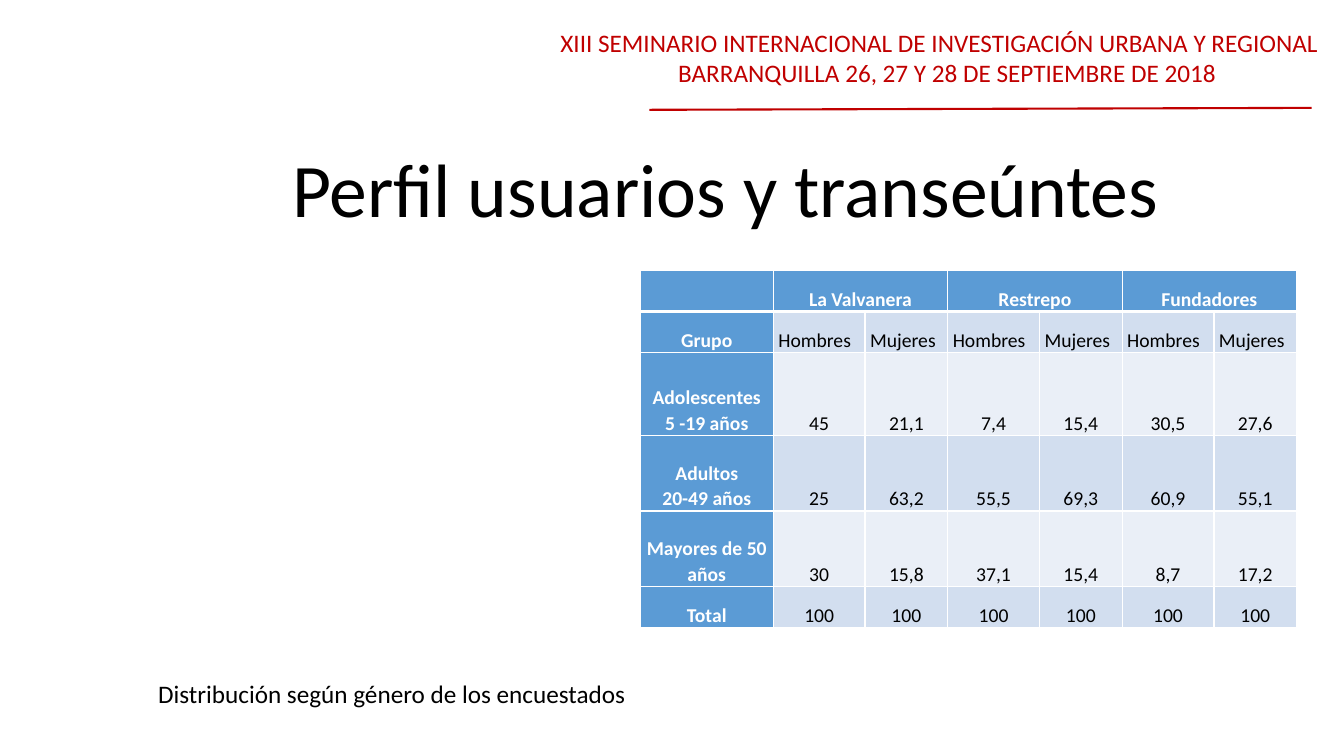
from lxml.etree import SubElement
from pptx import Presentation
from pptx.dml.color import RGBColor
from pptx.enum.shapes import MSO_CONNECTOR
from pptx.enum.text import MSO_ANCHOR, MSO_AUTO_SIZE, PP_ALIGN
from pptx.oxml import parse_xml
from pptx.oxml.ns import nsdecls, qn
from pptx.util import Inches, Pt

RED = RGBColor(0xC0, 0x00, 0x00)
BLACK = RGBColor(0x00, 0x00, 0x00)
WHITE = RGBColor(0xFF, 0xFF, 0xFF)
BLUE = RGBColor(0x5B, 0x9B, 0xD5)
BANDS = (RGBColor(0xEA, 0xEF, 0xF7), RGBColor(0xD2, 0xDE, 0xEF))

PLACES = ["La Valvanera", "Restrepo", "Fundadores"]
AGE_GROUPS = [
    ["Adolescentes\n5 -19 años", "45", "21,1", "7,4", "15,4", "30,5", "27,6"],
    ["Adultos\n20-49 años", "25", "63,2", "55,5", "69,3", "60,9", "55,1"],
    ["Mayores de 50 años", "30", "15,8", "37,1", "15,4", "8,7", "17,2"],
    ["Total"] + ["100"] * 6,
]
COLUMN_WIDTHS = [9.9] + [6.83, 6.15] * len(PLACES)
ROW_HEIGHTS = [5.47, 5.47, 10.93, 10, 10, 5.47]


class SeminarSlide:
    """Draw seminar elements, with lengths in percent of the slide's size."""

    font_name = "Calibri"

    def __init__(self, presentation):
        """Add a title-only slide to the presentation."""
        self.width = presentation.slide_width
        self.height = presentation.slide_height
        self.slide = presentation.slides.add_slide(presentation.slide_layouts[5])

    def across(self, share):
        """Turn a share of the width into a length."""
        return int(self.width * share / 100)

    def down(self, share):
        """Turn a share of the height into a length."""
        return int(self.height * share / 100)

    def box(self, left, top, width, height):
        """Turn four shares into a position and a size."""
        return self.across(left), self.down(top), self.across(width), self.down(height)

    def set_text(self, text_frame, text, size, color, alignments, bold=False):
        """Set the text and format each paragraph with its alignment."""
        text_frame.text = text
        text_frame.word_wrap = True
        for index, paragraph in enumerate(text_frame.paragraphs):
            paragraph.alignment = alignments[min(index, len(alignments) - 1)]
            for run in paragraph.runs:
                run.font.name = self.font_name
                run.font.size = Pt(size)
                run.font.bold = bold
                run.font.color.rgb = color

    def title(self, text, area):
        """Fill and place the title placeholder."""
        shape = self.slide.shapes.title
        shape.left, shape.top, shape.width, shape.height = self.box(*area)
        self.set_text(shape.text_frame, text, 54, BLACK, [PP_ALIGN.CENTER])
        shape.text_frame.auto_size = MSO_AUTO_SIZE.NONE
        shape.text_frame.vertical_anchor = MSO_ANCHOR.TOP

    def text(self, text, area, color, alignments):
        """Add a text box."""
        shape = self.slide.shapes.add_textbox(*self.box(*area))
        self.set_text(shape.text_frame, text, 18, color, alignments)

    def rule(self, start, end):
        """Add a thin red line between two points."""
        line = self.slide.shapes.add_connector(
            MSO_CONNECTOR.STRAIGHT,
            self.across(start[0]), self.down(start[1]),
            self.across(end[0]), self.down(end[1]),
        )
        line.line.color.rgb = RED
        line.line.width = Pt(1.5)
        SubElement(line._element.spPr, qn("a:effectLst"))

    def borders(self, cell, row):
        """Outline a cell in white, thicker under the heading row."""
        properties = cell._tc.get_or_add_tcPr()
        for index, side in enumerate(("lnL", "lnR", "lnT", "lnB")):
            thick = (row, side) in ((0, "lnB"), (1, "lnT"))
            border = parse_xml(
                f'<a:{side} {nsdecls("a")} w="{Pt(3 if thick else 1)}"><a:solidFill>'
                f'<a:srgbClr val="{WHITE}"/></a:solidFill></a:{side}>'
            )
            properties.insert(index, border)

    def cell(self, cell, text, row, column):
        """Fill and format one table cell."""
        heading = row == 0 or column == 0
        left_aligned = row == 1 and column > 0
        alignment = PP_ALIGN.LEFT if left_aligned else PP_ALIGN.CENTER
        self.set_text(cell.text_frame, text, 14, WHITE if heading else BLACK,
                      [alignment], heading)
        for paragraph in cell.text_frame.paragraphs:
            paragraph.line_spacing = 1.07
        cell.vertical_anchor = MSO_ANCHOR.BOTTOM
        cell.margin_left = cell.margin_right = Inches(0.05)
        cell.margin_top = cell.margin_bottom = 0
        cell.fill.solid()
        cell.fill.fore_color.rgb = BLUE if heading else BANDS[row % 2]
        self.borders(cell, row)

    def table(self, rows, left, top):
        """Add the table and merge each pair of heading cells."""
        area = self.box(left, top, sum(COLUMN_WIDTHS), sum(ROW_HEIGHTS))
        table = self.slide.shapes.add_table(len(rows), len(rows[0]), *area).table
        for column, share in zip(table.columns, COLUMN_WIDTHS):
            column.width = self.across(share)
        for row, share in zip(table.rows, ROW_HEIGHTS):
            row.height = self.down(share)
        for row, texts in enumerate(rows):
            for column, text in enumerate(texts):
                self.cell(table.cell(row, column), text, row, column)
        for column in range(1, len(rows[0]), 2):
            table.cell(0, column).merge(table.cell(0, column + 1))


def main():
    """Build and save the slide."""
    presentation = Presentation()
    presentation.slide_width = Inches(13.33)
    presentation.slide_height = Inches(7.5)
    seminar = SeminarSlide(presentation)
    seminar.rule((48.31, 14.53), (97.6, 14.27))
    seminar.text(
        "XIII SEMINARIO INTERNACIONAL DE INVESTIGACIÓN URBANA Y REGIONAL\n"
        "BARRANQUILLA 26, 27 Y 28 DE SEPTIEMBRE DE 2018",
        (40.96, 2.93, 59.04, 9.47), RED, [PP_ALIGN.LEFT, PP_ALIGN.CENTER],
    )
    seminar.title("Perfil usuarios y transeúntes ", (12.6, 18.13, 84.02, 13.47))
    seminar.text("Distribución según género de los encuestados",
                 (11.03, 89.07, 39.76, 5.33), BLACK, [PP_ALIGN.LEFT])
    place_heading = [""] + [text for place in PLACES for text in (place, "")]
    gender_heading = ["Grupo"] + ["Hombres", "Mujeres"] * len(PLACES)
    seminar.table([place_heading, gender_heading] + AGE_GROUPS, 47.64, 35.73)
    presentation.save("out.pptx")


if __name__ == "__main__":
    main()
